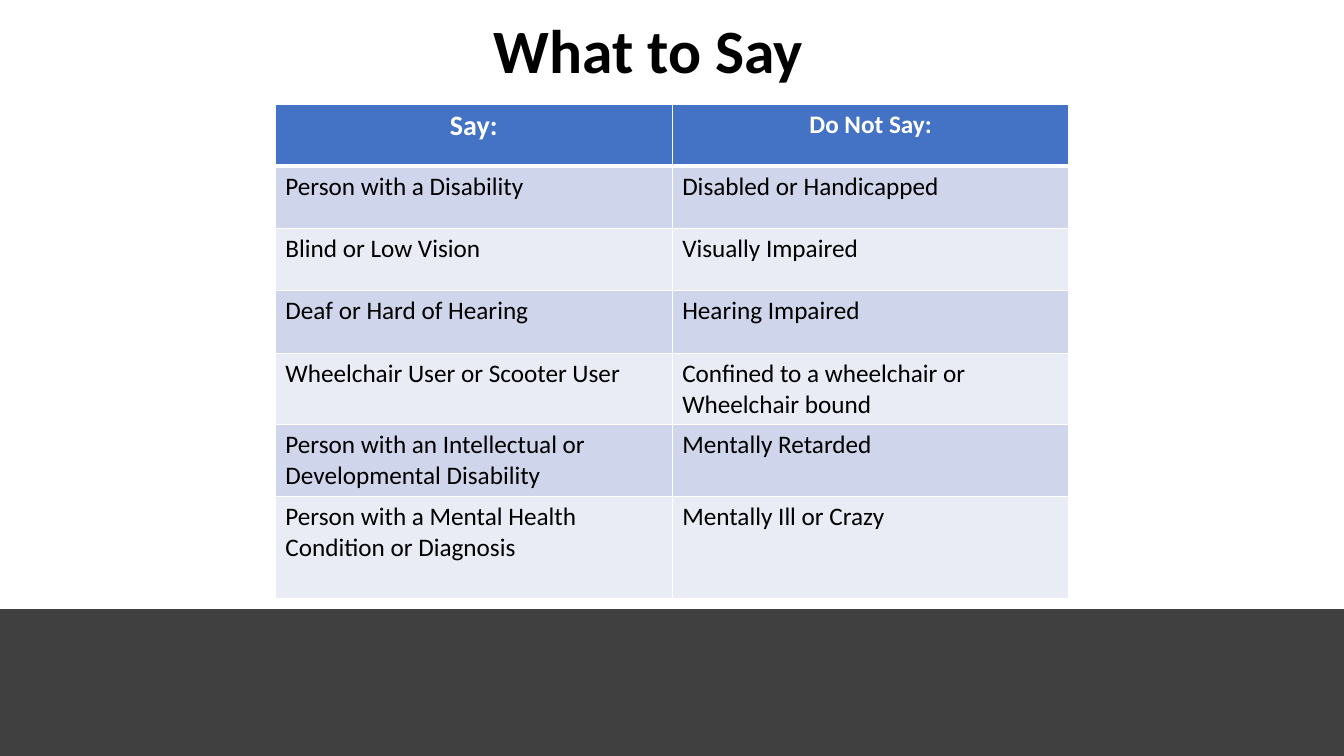
"""Build the "What to Say" slide: a title, a wording table and a dark footer band."""
from dataclasses import dataclass

from lxml import etree
from pptx import Presentation
from pptx.dml.color import RGBColor
from pptx.enum.shapes import MSO_SHAPE
from pptx.enum.text import MSO_ANCHOR, MSO_AUTO_SIZE, PP_ALIGN
from pptx.oxml.ns import qn
from pptx.slide import Slide
from pptx.table import _Cell
from pptx.text.text import TextFrame
from pptx.util import Cm, Pt

RECTANGLE = MSO_SHAPE.RECTANGLE
MIDDLE = MSO_ANCHOR.MIDDLE
NO_AUTOFIT = MSO_AUTO_SIZE.NONE
LEFT, CENTER = PP_ALIGN.LEFT, PP_ALIGN.CENTER


@dataclass(frozen=True)
class Theme:
    font: str = "Calibri"
    text: str = "000000"
    white: str = "FFFFFF"
    footer: str = "404040"
    header: str = "4472C4"
    bands: tuple[str, str] = ("CFD5EA", "E9EBF5")
    title_size: int = 44
    say_size: int = 20
    body_size: int = 18
    border: int = 1
    header_border: int = 3


@dataclass(frozen=True)
class Wording:
    say: str
    avoid: str
    height: float = 1.57


THEME = Theme()
HEADER = Wording("Say:", "Do Not Say:")
WORDINGS = (
    Wording("Person with a Disability", "Disabled or Handicapped"),
    Wording("Blind or Low Vision", "Visually Impaired"),
    Wording("Deaf or Hard of Hearing", "Hearing Impaired"),
    Wording("Wheelchair User or Scooter User",
            "Confined to a wheelchair or Wheelchair bound", 1.8),
    Wording("Person with an Intellectual or Developmental Disability",
            "Mentally Retarded", 1.8),
    Wording("Person with a Mental Health Condition or Diagnosis",
            "Mentally Ill or Crazy", 2.57),
)


def write(tf: TextFrame, text: str, *, size: int = THEME.body_size,
          color: str = THEME.text, bold: bool = False,
          align: PP_ALIGN = LEFT, spacing: float = 1.0) -> None:
    tf.word_wrap = True
    p = tf.paragraphs[0]
    p.alignment = align
    p.line_spacing = spacing
    r = p.add_run()
    r.text = text
    r.font.name = THEME.font
    r.font.size = Pt(size)
    r.font.bold = bold
    r.font.color.rgb = RGBColor.from_string(color)


def format_cell(cell: _Cell, fill: str, **widths: int) -> None:
    tc_pr = cell._tc.get_or_add_tcPr()
    for side in ("L", "R", "T", "B"):
        width = Pt(widths.get(side, THEME.border))
        ln = etree.SubElement(tc_pr, qn(f"a:ln{side}"), w=str(width))
        solid = etree.SubElement(ln, qn("a:solidFill"))
        etree.SubElement(solid, qn("a:srgbClr"), val=THEME.white)
    cell.fill.solid()
    cell.fill.fore_color.rgb = RGBColor.from_string(fill)


def add_footer(s: Slide, width: int) -> None:
    sp = s.shapes.add_shape(RECTANGLE, 0, Cm(15.36), width, Cm(3.69))
    sp.shadow.inherit = False
    color = RGBColor.from_string(THEME.footer)
    sp.fill.solid()
    sp.fill.fore_color.rgb = color
    sp.line.color.rgb = color
    sp.line.width = Pt(1)


def add_title(s: Slide, text: str) -> None:
    sp = s.shapes.title
    sp.left, sp.top, sp.width, sp.height = Cm(1.73), Cm(-0.48), Cm(29.21), Cm(3.68)
    tf = sp.text_frame
    tf.auto_size = NO_AUTOFIT
    tf.vertical_anchor = MIDDLE
    write(tf, text, size=THEME.title_size, bold=True, align=CENTER, spacing=0.9)


def add_wording_table(s: Slide) -> None:
    rows = (HEADER, *WORDINGS)
    height = Cm(sum(row.height for row in rows))
    table = s.shapes.add_table(len(rows), 2, Cm(6.94), Cm(2.62), Cm(20), height).table
    for i, row in enumerate(rows):
        table.rows[i].height = Cm(row.height)
        for j, text in enumerate((row.say, row.avoid)):
            cell = table.cell(i, j)
            if i == 0:
                format_cell(cell, THEME.header, B=THEME.header_border)
                write(cell.text_frame, text, color=THEME.white, bold=True, align=CENTER,
                      size=(THEME.say_size, THEME.body_size)[j])
            else:
                top = THEME.header_border if i == 1 else THEME.border
                format_cell(cell, THEME.bands[(i - 1) % 2], T=top)
                write(cell.text_frame, text)


def main() -> None:
    prs = Presentation()
    prs.slide_width, prs.slide_height = Cm(33.87), Cm(19.05)
    s = prs.slides.add_slide(prs.slide_layouts[5])
    add_footer(s, prs.slide_width)
    add_title(s, "What to Say")
    add_wording_table(s)
    prs.save("out.pptx")


if __name__ == "__main__":
    main()
